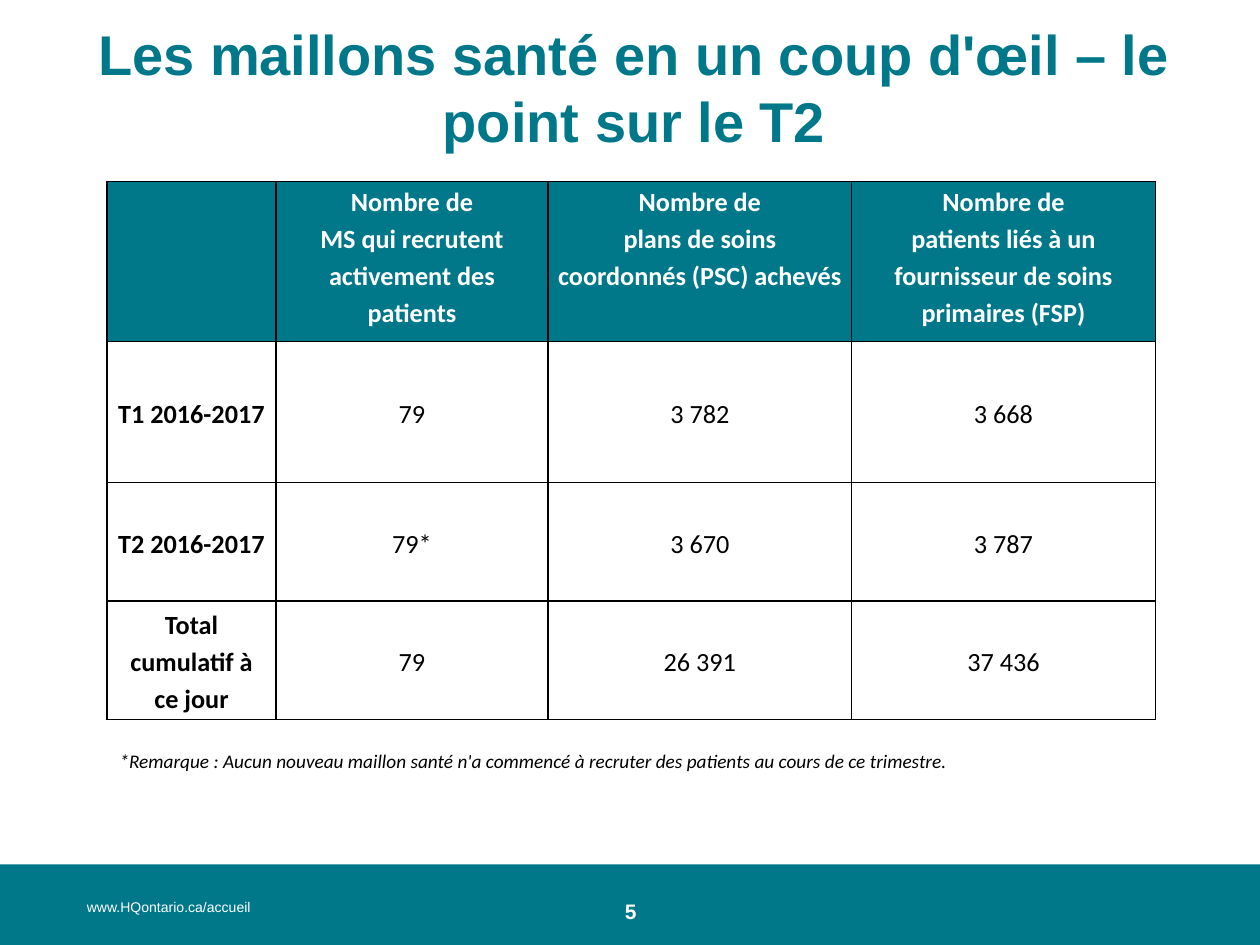
from lxml import etree
from pptx import Presentation
from pptx import util as u
from pptx.dml.color import RGBColor
from pptx.enum import shapes, text
from pptx.oxml import ns

TEAL, WHITE, BLACK = "00788A", "FFFFFF", "000000"
CENTER = text.PP_ALIGN.CENTER
COLUMNS = [1.34, 2.16, 2.41, 2.41]
ROWS = [1.27, 1.12, 0.94, 0.94]
HEADER = [
    [],
    ["Nombre de", "MS qui recrutent activement des patients"],
    ["Nombre de", "plans de soins coordonnés (PSC) achevés"],
    ["Nombre de", "patients liés à un", "fournisseur de soins primaires (FSP)"],
]
BODY = [
    ["T1 2016-2017", "79", "3 782", "3 668"],
    ["T2 2016-2017", "79*", "3 670", "3 787"],
    ["Total cumulatif à ce jour", "79", "26 391", "37 436"],
]


def rgb(color):
    """Turn a hex string into a colour."""
    return RGBColor.from_string(color)


def box(x, y, w, h):
    """Return left, top, width and height as lengths."""
    return [u.Inches(v) for v in (x, y, w, h)]


def add_run(p, words, size, color, font="Arial", bold=False, italic=False):
    """Add one formatted run to a paragraph."""
    r = p.add_run()
    r.text = words
    r.font.name, r.font.size = font, u.Pt(size)
    r.font.bold, r.font.italic = bold, italic
    r.font.color.rgb = rgb(color)


def add_text(s, x, y, w, h, words, size, color, align=None, **style):
    """Add a wrapped one-paragraph text box."""
    tf = s.shapes.add_textbox(*box(x, y, w, h)).text_frame
    tf.word_wrap = True
    p = tf.paragraphs[0]
    p.alignment = align
    add_run(p, words, size, color, **style)


def add_title(s, x, y, w, h):
    """Place and format the title placeholder."""
    sp = s.shapes.title
    sp.left, sp.top, sp.width, sp.height = box(x, y, w, h)
    tf = sp.text_frame
    tf.auto_size = text.MSO_AUTO_SIZE.NONE
    tf.vertical_anchor = text.MSO_ANCHOR.MIDDLE
    p = tf.paragraphs[0]
    p.alignment = CENTER
    add_run(p, "Les maillons santé en un coup d'œil – le point sur le T2", 32, TEAL, bold=True)


def add_footer(s, x, y, w, h):
    """Draw the footer band with the web address and page number."""
    sp = s.shapes.add_shape(shapes.MSO_SHAPE.RECTANGLE, *box(x, y, w, h))
    sp.shadow.inherit = False
    sp.fill.solid()
    sp.fill.fore_color.rgb = rgb(TEAL)
    sp.line.fill.background()
    add_text(s, x + 4.42, y + 0.22, 1.17, 0.3, "5", 12, WHITE, CENTER, bold=True)
    add_text(s, x + 0.59, y + 0.22, 3.08, 0.27, "www.HQontario.ca/accueil", 8, WHITE)


def set_borders(cell):
    """Give all four sides of a cell a thin black line."""
    tc_pr = cell._tc.get_or_add_tcPr()
    for side in ("a:lnL", "a:lnR", "a:lnT", "a:lnB"):
        ln = etree.SubElement(tc_pr, ns.qn(side), w=str(u.Pt(1)))
        fill = etree.SubElement(ln, ns.qn("a:solidFill"))
        etree.SubElement(fill, ns.qn("a:srgbClr"), val=BLACK)


def fill_cell(cell, lines, header, bold):
    """Format one cell and write its lines."""
    set_borders(cell)
    cell.margin_left = cell.margin_right = u.Inches(0.07)
    cell.margin_top = cell.margin_bottom = 0
    if header:
        cell.fill.solid()
        cell.fill.fore_color.rgb = rgb(TEAL)
    else:
        cell.fill.background()
        cell.vertical_anchor = text.MSO_ANCHOR.MIDDLE
    tf = cell.text_frame
    for i, line in enumerate(lines):
        p = tf.add_paragraph() if i else tf.paragraphs[0]
        p.alignment, p.line_spacing = CENTER, 1.15
        add_run(p, line, 15, WHITE if header else BLACK, font="Calibri", bold=bold)


def add_results(s, x, y):
    """Add the quarterly results table and its note."""
    w, h = sum(COLUMNS), sum(ROWS)
    table = s.shapes.add_table(len(ROWS), len(COLUMNS), *box(x, y, w, h)).table
    table.horz_banding = False
    for column, width in zip(table.columns, COLUMNS):
        column.width = u.Inches(width)
    for row, height in zip(table.rows, ROWS):
        row.height = u.Inches(height)
    content = [HEADER] + [[[words] for words in row] for row in BODY]
    for i, row in enumerate(content):
        for j, lines in enumerate(row):
            fill_cell(table.cell(i, j), lines, header=i == 0, bold=i == 0 or j == 0)
    note = ("*Remarque : Aucun nouveau maillon santé n'a commencé à recruter "
            "des patients au cours de ce trimestre.")
    add_text(s, x, y + 4.46, w, 0.5, note, 11, BLACK, font="Calibri", italic=True)


def main():
    """Build and save the slide."""
    prs = Presentation()
    prs.slide_width, prs.slide_height = u.Inches(10), u.Inches(7.5)
    s = prs.slides.add_slide(prs.slide_layouts[5])
    add_footer(s, 0, 6.86, 10.04, 0.67)
    add_title(s, 0.5, 0.3, 9.07, 0.77)
    add_results(s, 0.85, 1.44)
    prs.save("out.pptx")


if __name__ == "__main__":
    main()
